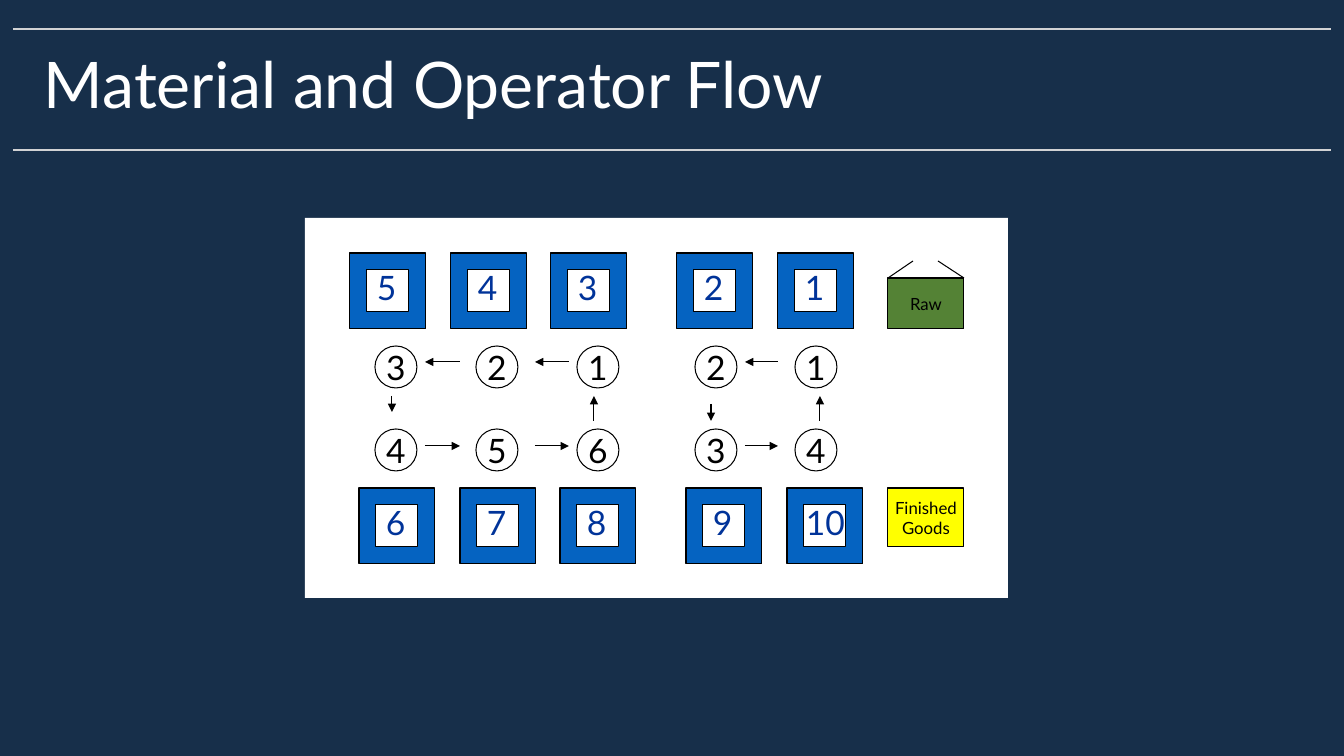
import pptx
import pptx.util
import pptx.dml.color
import pptx.enum.shapes
import pptx.enum.text
from lxml import etree
from pptx.oxml.ns import qn

# Content, lengths in px
TITLE = "Material and Operator Flow"
STATION_ROWS = [  # left of first station, top, numbers from left to right
    (350, 253, ["5", "4", "3", "2", "1"]),
    (359, 488, ["6", "7", "8", "9", "10"]),
]
OPERATOR_ROWS = [  # top, step numbers from left to right
    (346, ["3", "2", "1", "2", "1"]),
    (429, ["4", "5", "6", "3", "4"]),
]
STATION_OFFSETS = [0, 101, 201, 327, 428]
OPERATOR_LEFTS = [375, 476, 577, 695, 795]
STOCKS = [  # lines of text, top, height, fill
    (["Raw"], 278, 51, "green"),
    (["Finished", "Goods"], 488, 59, "yellow"),
]
STOCK_LEFT, STOCK_WIDTH = 888, 76
STATION, WINDOW = 76, 42
NUMBER_WIDTH, NUMBER_HEIGHT = 68, 50
ROOF = [(913, 261, 888, 278), (938, 261, 964, 278)]
OPERATOR_MOVES = [
    (569, 362, 535, 362), (460, 362, 425, 362), (392, 396, 392, 412),
    (425, 446, 460, 446), (535, 446, 569, 446), (594, 421, 594, 396),
    (778, 362, 745, 362), (711, 404, 711, 421),
    (745, 446, 778, 446), (820, 421, 820, 396),
]
TITLE_RULES = [29, 150]
COLORS = {
    "navy": "172F4A", "rule": "D1D2D4", "white": "FFFFFF", "black": "000000",
    "blue": "0563C1", "number": "003399", "green": "548235", "yellow": "FFFF00",
}

EMU_PER_PX = 914400 / 100.8
RECT = pptx.enum.shapes.MSO_SHAPE.RECTANGLE
OVAL = pptx.enum.shapes.MSO_SHAPE.OVAL
CENTER = pptx.enum.text.PP_ALIGN.CENTER
MIDDLE = pptx.enum.text.MSO_ANCHOR.MIDDLE


def px(*lengths):
    return [pptx.util.Emu(round(length * EMU_PER_PX)) for length in lengths]


def rgb(name):
    return pptx.dml.color.RGBColor.from_string(COLORS[name])


def write(frame, lines, size, color, align=None):
    frame.text = "\n".join(lines)
    for paragraph in frame.paragraphs:
        paragraph.alignment = align
        paragraph.font.name = "Lato"
        paragraph.font.size = pptx.util.Pt(size)
        paragraph.font.color.rgb = rgb(color)


def add_box(kind, left, top, width, height, fill, outlined=True, lines=(), size=12):
    box = slide.shapes.add_shape(kind, *px(left, top, width, height))
    box.shadow.inherit = False
    box.fill.solid()
    box.fill.fore_color.rgb = rgb(fill)
    if outlined:
        box.line.color.rgb = rgb("black")
        box.line.width = pptx.util.Pt(0.75)
    else:
        box.line.fill.background()
    if lines:
        box.text_frame.word_wrap = False
        box.text_frame.vertical_anchor = MIDDLE
        write(box.text_frame, lines, size, "black", CENTER)


def add_line(ends, color="black", width=0.75, arrow=False):
    line = slide.shapes.add_connector(
        pptx.enum.shapes.MSO_CONNECTOR.STRAIGHT, *px(*ends))
    line.line.color.rgb = rgb(color)
    line.line.width = pptx.util.Pt(width)
    properties = line._element.spPr
    if arrow:
        etree.SubElement(properties.find(qn("a:ln")), qn("a:tailEnd"), type="triangle")
    etree.SubElement(properties, qn("a:effectLst"))


def add_label(left, top, width, height, text, size, color):
    label = slide.shapes.add_textbox(*px(left, top, width, height))
    label.text_frame.word_wrap = True
    write(label.text_frame, [text], size, color)
    return label.text_frame


presentation = pptx.Presentation()
presentation.slide_width, presentation.slide_height = px(1344, 756)
slide = presentation.slides.add_slide(presentation.slide_layouts[6])
slide.background.fill.solid()
slide.background.fill.fore_color.rgb = rgb("navy")

# Title between two rules
for rule_y in TITLE_RULES:
    add_line((13, rule_y, 1331, rule_y), "rule", 2)
title = add_label(34, 49, 1276, 81, TITLE, 45.9, "white")
title.vertical_anchor = MIDDLE
title.paragraphs[0].line_spacing = 0.82
title.paragraphs[0].space_after = pptx.util.Pt(9)

# Diagram panel
add_box(RECT, 305, 218, 703, 380, "white", outlined=False)

# Numbered stations, two-digit numbers set further left
inset = (STATION - WINDOW) // 2
for first_left, top, numbers in STATION_ROWS:
    for offset, number in zip(STATION_OFFSETS, numbers):
        left = first_left + offset
        add_box(RECT, left, top, STATION, STATION, "blue")
        add_box(RECT, left + inset, top + inset, WINDOW, WINDOW, "white")
        number_left = left + inset - 8 * (len(number) - 1)
        add_label(number_left, top + 9, NUMBER_WIDTH, NUMBER_HEIGHT,
                  number, 24, "number")

# Raw material and finished goods
for lines, top, height, fill in STOCKS:
    add_box(RECT, STOCK_LEFT, top, STOCK_WIDTH, height, fill, lines=lines)
for ends in ROOF:
    add_line(ends)

# Operator steps and the moves between them
for top, steps in OPERATOR_ROWS:
    for left, step in zip(OPERATOR_LEFTS, steps):
        add_box(OVAL, left, top, WINDOW, WINDOW, "white", lines=[step], size=24)
for ends in OPERATOR_MOVES:
    add_line(ends, arrow=True)

presentation.save("out.pptx")
